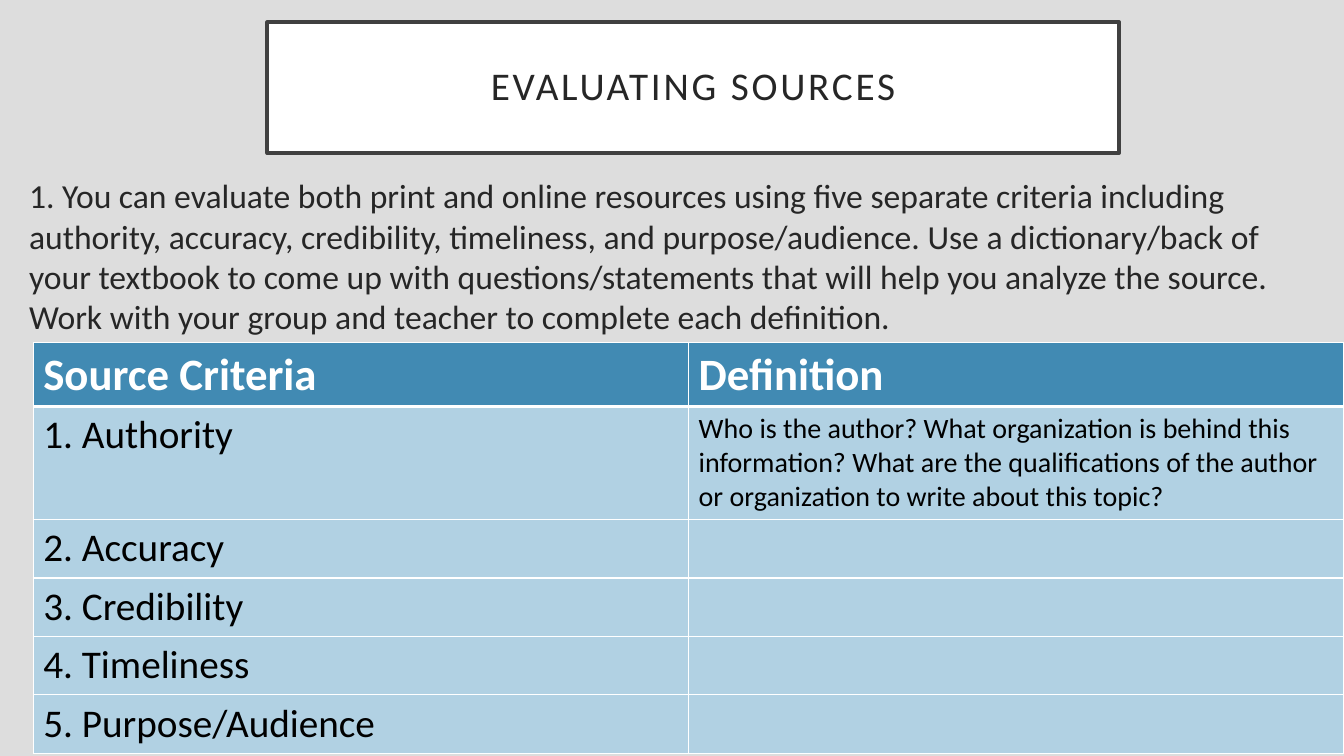
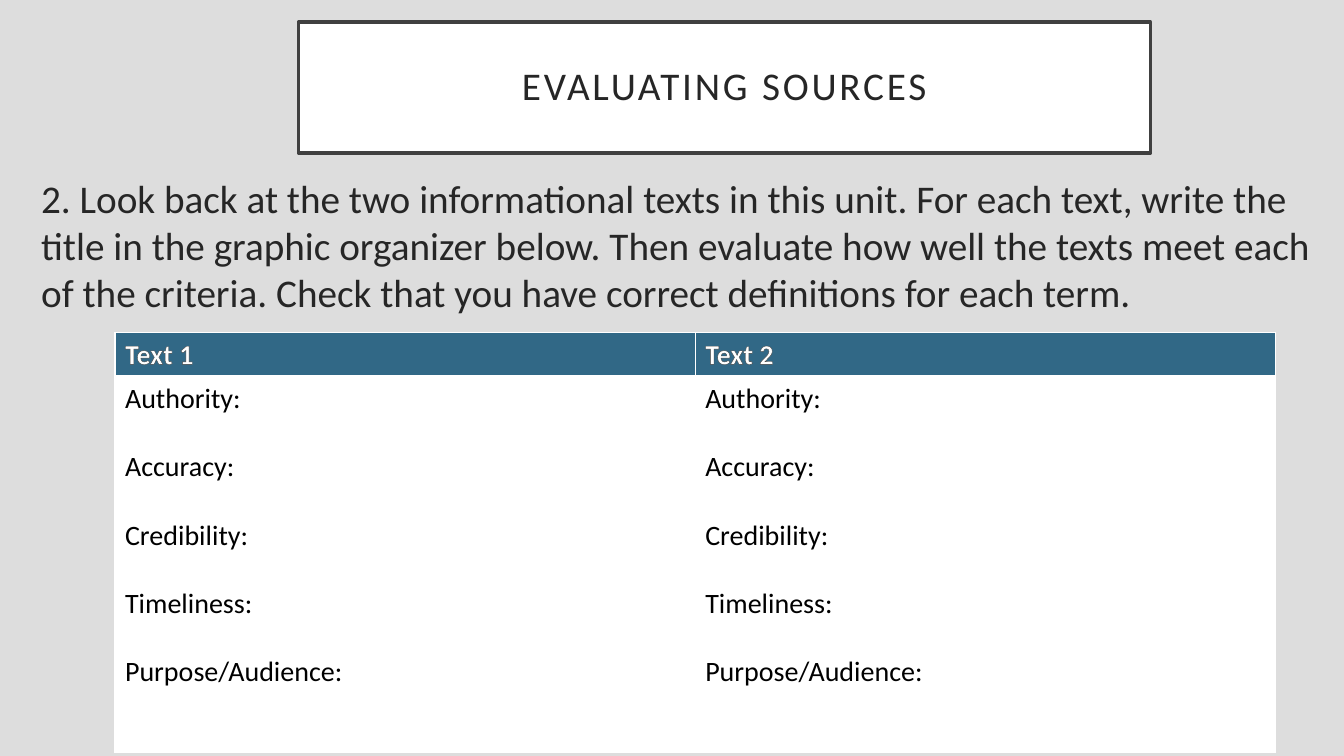
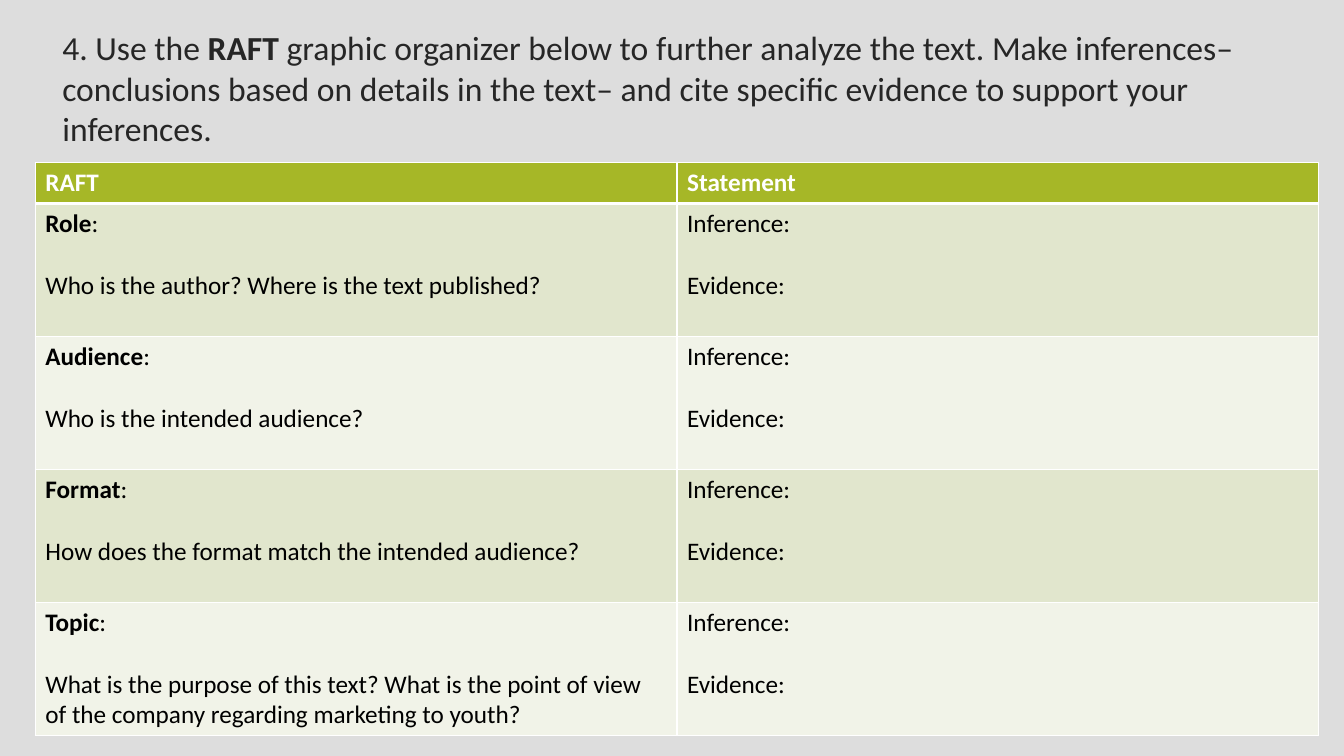
import lxml.etree
import pptx
import pptx.dml.color
import pptx.enum.shapes
import pptx.enum.text
import pptx.oxml.ns
import pptx.util

Inches = pptx.util.Inches
Pt = pptx.util.Pt
RGBColor = pptx.dml.color.RGBColor
qn = pptx.oxml.ns.qn

FONT = "Calibri"
WHITE = RGBColor(0xFF, 0xFF, 0xFF)
BLACK = RGBColor(0x00, 0x00, 0x00)
INK = RGBColor(0x26, 0x26, 0x26)
OUTLINE = RGBColor(0x40, 0x40, 0x40)
BACKGROUND = RGBColor(0xDD, 0xDD, 0xDD)
BLUE = RGBColor(0x41, 0x8A, 0xB3)
PALE_BLUE = RGBColor(0xB1, 0xD1, 0xE3)
DARK_BLUE = RGBColor(0x31, 0x68, 0x86)
GREEN = RGBColor(0xA6, 0xB7, 0x27)
PALE_GREEN = RGBColor(0xE1, 0xE6, 0xCD)
LIGHT_GREEN = RGBColor(0xF1, 0xF3, 0xE8)


def write_text(frame, text, size, color=INK, bold=False, gap=0, align=None,
               line_spacing=None, tracking=0, outline=None):
    frame.word_wrap = True
    for index, line in enumerate(text.split("\n")):
        paragraph = frame.add_paragraph() if index else frame.paragraphs[0]
        paragraph.alignment = align
        paragraph.line_spacing = line_spacing
        if index:
            paragraph.space_before = Pt(gap)
        for position, part in enumerate(line.split("**")):
            if not part:
                continue
            run = paragraph.add_run()
            run.text = part
            run.font.name = FONT
            run.font.size = Pt(size)
            run.font.bold = bold or position % 2 == 1
            run.font.color.rgb = color
            properties = run.font._element
            if tracking:
                properties.set("spc", str(tracking * 100))
            if outline:
                line_element = lxml.etree.Element(qn("a:ln"), w=str(Pt(0.75)))
                fill = lxml.etree.SubElement(line_element, qn("a:solidFill"))
                lxml.etree.SubElement(fill, qn("a:srgbClr"), val=str(outline))
                properties.insert(0, line_element)


def set_borders(cell, top, bottom):
    widths = {"a:lnL": 1, "a:lnR": 1, "a:lnT": top, "a:lnB": bottom}
    properties = cell._tc.get_or_add_tcPr()
    for index, (tag, width) in enumerate(widths.items()):
        border = lxml.etree.Element(qn(tag), w=str(Pt(width)))
        fill = lxml.etree.SubElement(border, qn("a:solidFill"))
        lxml.etree.SubElement(fill, qn("a:srgbClr"), val=str(WHITE))
        properties.insert(index, border)


TITLE = "EVALUATING SOURCES"
CRITERIA = "Authority:\nAccuracy:\nCredibility:\nTimeliness:\nPurpose/Audience:"
STATEMENT = "Inference:\nEvidence:"

PAGES = [
    {
        "title_left": 2.65,
        "body": "1. You can evaluate both print and online resources using five separate criteria "
                "including authority, accuracy, credibility, timeliness, and purpose/audience. "
                "Use a dictionary/back of your textbook to come up with questions/statements that "
                "will help you analyze the source. Work with your group and teacher to complete "
                "each definition.",
        "body_size": 24,
        "body_box": (0.19, 1.69, 12.91, 1.94),
        "table_box": (0.33, 3.4, 13),
        "row_heights": [0.63, 1.12] + [0.58] * 4,
        "header": BLUE,
        "header_size": 32,
        "fills": [PALE_BLUE],
        "cell_sizes": (28, 20),
        "rows": [
            ("Source Criteria", "Definition"),
            ("1. Authority", "Who is the author? What organization is behind this information? "
                             "What are the qualifications of the author or organization to write "
                             "about this topic?"),
            ("2. Accuracy", ""),
            ("3. Credibility", ""),
            ("4. Timeliness", ""),
            ("5. Purpose/Audience", ""),
        ],
    },
    {
        "title_left": 2.96,
        "body": "2. Look back at the two informational texts in this unit. For each text, write "
                "the title in the graphic organizer below. Then evaluate how well the texts meet "
                "each of the criteria. Check that you have correct definitions for each term.",
        "body_size": 28,
        "body_box": (0.31, 1.68, 13.02, 1.69),
        "table_box": (1.14, 3.3, 11.51),
        "row_heights": [0.43, 3.73],
        "header": DARK_BLUE,
        "header_size": 20,
        "header_outline": OUTLINE,
        "fills": [WHITE],
        "cell_sizes": (20, 20),
        "rows": [("Text 1", "Text 2"), (CRITERIA, CRITERIA)],
    },
    {
        "body": "4. Use the **RAFT** graphic organizer below to further analyze the text. Make "
                "inferences– conclusions based on details in the text– and cite specific evidence "
                "to support your inferences.",
        "body_size": 24,
        "body_box": (0.52, 0.22, 12.57, 0.87),
        "table_box": (0.35, 1.61, 12.73),
        "row_heights": [0.41] + [1.32] * 4,
        "header": GREEN,
        "header_size": 18,
        "fills": [PALE_GREEN, LIGHT_GREEN],
        "cell_sizes": (18, 18),
        "rows": [
            ("RAFT", "Statement"),
            ("**Role**:\nWho is the author? Where is the text published?", STATEMENT),
            ("**Audience**:\nWho is the intended audience?", STATEMENT),
            ("**Format**:\nHow does the format match the intended audience?", STATEMENT),
            ("**Topic**:\nWhat is the purpose of this text? What is the point of view of the "
             "company regarding marketing to youth?", STATEMENT),
        ],
    },
]

presentation = pptx.Presentation()
presentation.slide_width = Inches(13.33)
presentation.slide_height = Inches(7.5)
background = presentation.slide_master.background.fill
background.solid()
background.fore_color.rgb = BACKGROUND

for page in PAGES:
    slide = presentation.slides.add_slide(presentation.slide_layouts[6])

    if "title_left" in page:
        title = slide.shapes.add_shape(
            pptx.enum.shapes.MSO_SHAPE.RECTANGLE,
            Inches(page["title_left"]), Inches(0.22), Inches(8.45), Inches(1.3))
        title.shadow.inherit = False
        title.fill.solid()
        title.fill.fore_color.rgb = WHITE
        title.line.color.rgb = OUTLINE
        title.line.width = Pt(2.5)
        title.text_frame.vertical_anchor = pptx.enum.text.MSO_ANCHOR.MIDDLE
        write_text(title.text_frame, TITLE, 28, line_spacing=0.9, tracking=2,
                   align=pptx.enum.text.PP_ALIGN.CENTER)

    body = slide.shapes.add_textbox(*[Inches(length) for length in page["body_box"]])
    write_text(body.text_frame, page["body"], page["body_size"])

    left, top, width = page["table_box"]
    heights = page["row_heights"]
    table = slide.shapes.add_table(
        len(heights), 2, Inches(left), Inches(top), Inches(width), Inches(sum(heights))).table
    for row_index, (height, texts) in enumerate(zip(heights, page["rows"])):
        table.rows[row_index].height = Inches(height)
        is_header = row_index == 0
        for column_index, text in enumerate(texts):
            cell = table.cell(row_index, column_index)
            cell.fill.solid()
            if is_header:
                cell.fill.fore_color.rgb = page["header"]
                write_text(cell.text_frame, text, page["header_size"], color=WHITE, bold=True,
                           outline=page.get("header_outline"))
            else:
                fills = page["fills"]
                size = page["cell_sizes"][column_index]
                cell.fill.fore_color.rgb = fills[(row_index - 1) % len(fills)]
                write_text(cell.text_frame, text, size, color=BLACK, gap=size * 1.22)
            set_borders(cell, top=3 if row_index == 1 else 1, bottom=3 if is_header else 1)

presentation.save("out.pptx")
